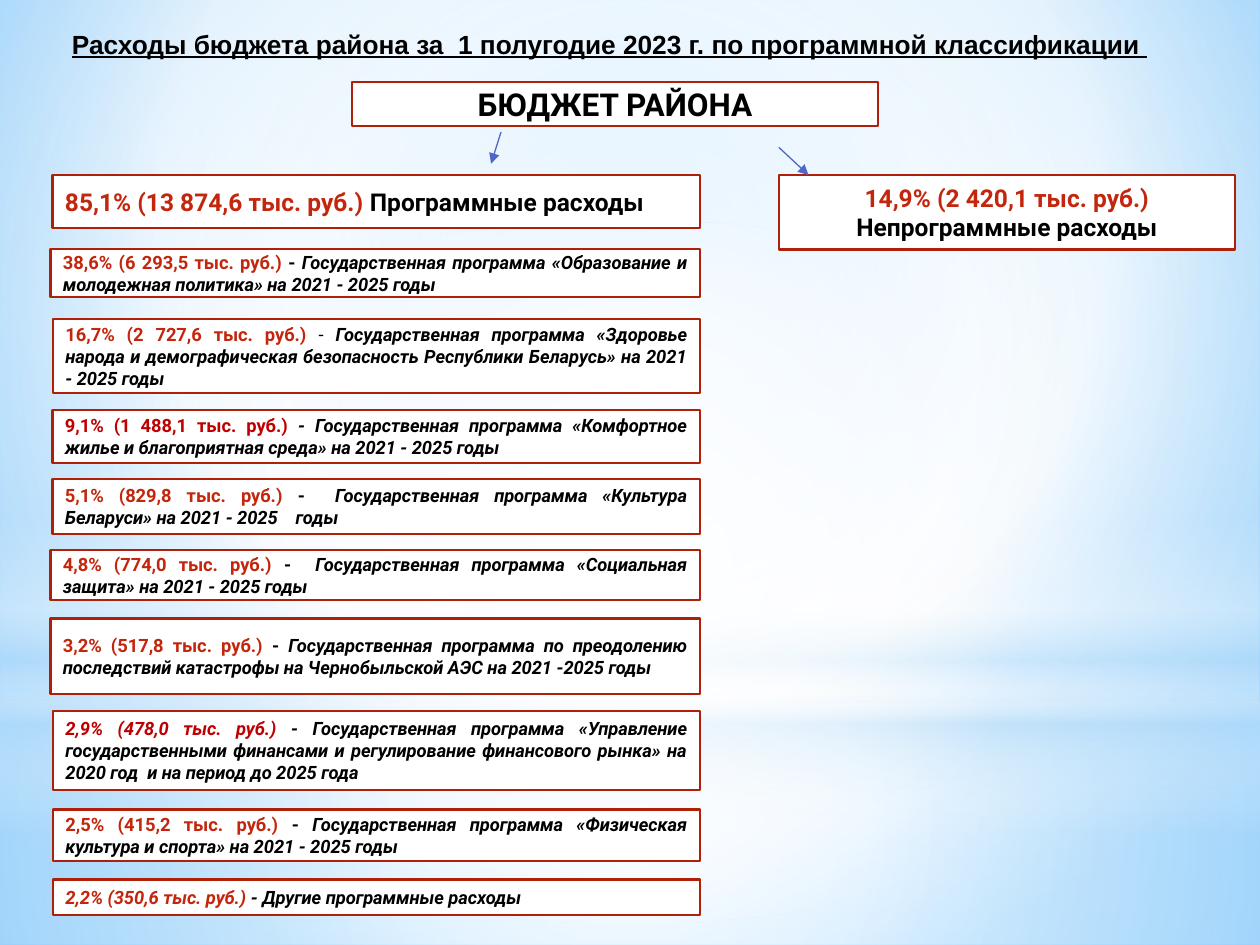
"""Slide on district budget spending by programme classification."""
from dataclasses import dataclass
from typing import Optional

from lxml import etree
from pptx import Presentation
from pptx import util as u
from pptx.dml.color import RGBColor
from pptx.enum import shapes, text
from pptx.oxml import ns, parse_xml

Cm, Pt = u.Cm, u.Pt
Box = tuple[float, float, float, float]


@dataclass(frozen=True)
class Theme:
    black: str = "000000"
    white: str = "FFFFFF"
    red: str = "C3260C"
    dark_red: str = "C00000"
    border: str = "B01F07"
    arrow: str = "4E67C8"
    mist: str = "B4DCFA"
    sky: str = "9ED5FF"
    deep_sky: str = "5BB9FF"
    title_font: str = "Arial"
    font: str = "Roboto"
    title_size: float = 15
    head_size: float = 18
    branch_size: float = 14
    body_size: float = 10.5
    border_width: float = 1.25
    arrow_width: float = 0.75


T = Theme()


@dataclass(frozen=True)
class Gradient:
    stops: tuple[tuple[int, str, int], ...]
    centre: Optional[Box] = (50, 50, 50, 50)


@dataclass(frozen=True)
class Backdrop:
    box: Box
    gradient: Gradient
    kind: shapes.MSO_SHAPE = shapes.MSO_SHAPE.RECTANGLE


@dataclass(frozen=True)
class Programme:
    left: float
    top: float
    height: float
    amount: str
    name: str
    dash: str = "- "
    color: str = T.red
    amount_italic: bool = False
    dash_bold: bool = True
    dash_italic: bool = False


SKY = Gradient(((0, T.sky, 100), (60, T.white, 100), (100, T.deep_sky, 100)), (20, 10, 20, 60))
BACKDROPS = [
    Backdrop((0, 14.17, 25.4, 4.88), Gradient(((0, T.white, 91), (37, T.white, 76), (100, T.mist, 79)))),
    Backdrop((0, 0, 25.4, 14.17), Gradient(((0, T.white, 89), (48, T.white, 62), (100, T.mist, 79)))),
    Backdrop((0, 10.46, 25.4, 6.35), Gradient(
        ((0, T.white, 0), (29, T.white, 30), (45, T.mist, 40),
         (55, T.white, 26), (65, T.mist, 60), (100, T.white, 0)), None)),
    Backdrop((0, 4.45, 25.4, 14.17), Gradient(((0, T.white, 100), (56, T.white, 0))),
             shapes.MSO_SHAPE.OVAL),
]

RIGHT_EDGE = 14.11
PROGRAMMES = [
    Programme(1.02, 5.02, 0.97, "38,6% (6 293,5 тыс. руб.) ",
              "Государственная программа «Образование и молодежная политика» на 2021 - 2025 годы "),
    Programme(1.07, 6.43, 1.5, "16,7% (2 727,6 тыс. руб.) ",
              "Государственная программа «Здоровье народа и демографическая безопасность "
              "Республики Беларусь» на 2021 - 2025 годы ", dash_bold=False),
    Programme(1.06, 8.26, 1.07, "9,1% (1 488,1 тыс. руб.) ",
              "Государственная программа «Комфортное жилье и благоприятная среда» на 2021 - 2025 годы ",
              color=T.dark_red, dash_italic=True),
    Programme(1.06, 9.65, 1.12, "5,1% (829,8 тыс. руб.)",
              "Государственная программа «Культура Беларуси» на 2021 - 2025    годы ", dash=" -  "),
    Programme(1.02, 11.09, 1, "4,8% (774,0 тыс. руб.) ",
              "Государственная программа «Социальная защита» на 2021 - 2025 годы", dash="-  "),
    Programme(1.02, 12.47, 1.52, "3,2% (517,8 тыс. руб.) ",
              "Государственная программа по преодолению последствий катастрофы "
              "на Чернобыльской АЭС на 2021 -2025 годы "),
    Programme(1.07, 14.33, 1.6, "2,9% (478,0 тыс. руб.) ",
              "Государственная программа «Управление государственными финансами и регулирование "
              "финансового рынка» на 2020 год  и на период до 2025 года ",
              color=T.dark_red, amount_italic=True, dash_italic=True),
    Programme(1.07, 16.32, 1.04, "2,5% (415,2 тыс. руб.) ",
              "Государственная программа «Физическая культура и спорта» на 2021 - 2025 годы "),
    Programme(1.07, 17.73, 0.71, "2,2% (350,6 тыс. руб.) ", "Другие программные расходы",
              amount_italic=True, dash_italic=True),
]


def gradient_xml(gradient: Gradient) -> etree._Element:
    """Return a gradient fill element with stop opacities."""
    stops = "".join(
        f'<a:gs pos="{pos * 1000}"><a:srgbClr val="{color}"><a:alpha val="{alpha * 1000}"/>'
        "</a:srgbClr></a:gs>" for pos, color, alpha in gradient.stops)
    if gradient.centre:
        sides = " ".join(f'{k}="{v * 1000}"' for k, v in zip("ltrb", gradient.centre))
        course = f'<a:path path="circle"><a:fillToRect {sides}/></a:path>'
    else:
        course = '<a:lin ang="5400000" scaled="0"/>'
    return parse_xml(f'<a:gradFill {ns.nsdecls("a")} rotWithShape="1">'
                     f"<a:gsLst>{stops}</a:gsLst>{course}</a:gradFill>")


def set_gradient(element: etree._Element, gradient: Gradient) -> None:
    """Replace the solid fill of an element by a gradient."""
    solid = element.find(ns.qn("a:solidFill"))
    element.replace(solid, gradient_xml(gradient))


def add_run(p, content: str, *, size: float = T.body_size, color: str = T.black, bold: bool = True,
            italic: bool = False, underline: bool = False, font: str = T.font) -> None:
    """Append a formatted run to a paragraph."""
    r = p.add_run()
    r.text = content
    f = r.font
    f.name, f.size, f.bold, f.italic, f.underline = font, Pt(size), bold, italic, underline
    f.color.rgb = RGBColor.from_string(color)


def add_backdrop(slide, item: Backdrop) -> None:
    """Draw one soft background area."""
    sp = slide.shapes.add_shape(item.kind, *map(Cm, item.box))
    sp.shadow.inherit = False
    sp.line.fill.background()
    sp.fill.solid()
    set_gradient(sp.element.spPr, item.gradient)


def add_box(slide, box: Box, align: text.PP_ALIGN = text.PP_ALIGN.JUSTIFY):
    """Draw a bordered white box and return its paragraph."""
    sp = slide.shapes.add_shape(shapes.MSO_SHAPE.RECTANGLE, *map(Cm, box))
    sp.shadow.inherit = False
    sp.fill.solid()
    sp.fill.fore_color.rgb = RGBColor.from_string(T.white)
    sp.line.color.rgb = RGBColor.from_string(T.border)
    sp.line.width = Pt(T.border_width)
    tf = sp.text_frame
    tf.word_wrap, tf.vertical_anchor = True, text.MSO_ANCHOR.MIDDLE
    p = tf.paragraphs[0]
    p.alignment = align
    return p


def add_programme(slide, item: Programme) -> None:
    """Draw the box of one programme."""
    p = add_box(slide, (item.left, item.top, RIGHT_EDGE - item.left, item.height))
    add_run(p, item.amount, color=item.color, italic=item.amount_italic)
    add_run(p, item.dash, bold=item.dash_bold, italic=item.dash_italic)
    add_run(p, item.name, italic=True)


def add_arrow(slide, ends: Box) -> None:
    """Draw a thin arrow."""
    c = slide.shapes.add_connector(shapes.MSO_CONNECTOR.STRAIGHT, *map(Cm, ends))
    c.line.color.rgb = RGBColor.from_string(T.arrow)
    c.line.width = Pt(T.arrow_width)
    etree.SubElement(c.line._get_or_add_ln(), ns.qn("a:tailEnd"), type="triangle")
    etree.SubElement(c.element.spPr, ns.qn("a:effectLst"))


def add_title(slide) -> None:
    """Format the title and bring it in front of the backdrop."""
    sp = slide.shapes.title
    sp.left, sp.top, sp.width, sp.height = map(Cm, (1.02, 0.33, 23.5, 1.02))
    tf = sp.text_frame
    tf.word_wrap, tf.auto_size = True, text.MSO_AUTO_SIZE.SHAPE_TO_FIT_TEXT
    tf.vertical_anchor = text.MSO_ANCHOR.TOP
    p = tf.paragraphs[0]
    p.alignment = text.PP_ALIGN.LEFT
    add_run(p, " ", size=T.head_size, font=T.title_font)
    add_run(p, "Расходы бюджета района за  1 полугодие 2023 г. по программной классификации ",
            size=T.title_size, font=T.title_font, underline=True)
    slide.shapes.element.append(sp.element)


def main() -> None:
    """Build and save the slide."""
    prs = Presentation()
    prs.slide_width, prs.slide_height = Cm(25.4), Cm(19.05)
    slide = prs.slides.add_slide(prs.slide_layouts[5])
    slide.background.fill.solid()
    set_gradient(slide.element.find(".//" + ns.qn("p:bgPr")), SKY)
    for item in BACKDROPS:
        add_backdrop(slide, item)
    add_title(slide)
    p = add_box(slide, (7.1, 1.65, 10.6, 0.89), text.PP_ALIGN.CENTER)
    add_run(p, "БЮДЖЕТ РАЙОНА", size=T.head_size)
    for box, align, amount, name in (
            ((1.06, 3.53, 13.05, 1.06), text.PP_ALIGN.JUSTIFY,
             "85,1% (13 874,6 тыс. руб.) ", "Программные расходы"),
            ((15.7, 3.53, 9.2, 1.5), text.PP_ALIGN.CENTER,
             "14,9% (2 420,1 тыс. руб.) ", "Непрограммные расходы")):
        p = add_box(slide, box, align)
        add_run(p, amount, size=T.branch_size, color=T.red)
        add_run(p, name, size=T.branch_size)
    for item in PROGRAMMES:
        add_programme(slide, item)
    for ends in ((10.1, 2.66, 9.9, 3.3), (15.7, 2.97, 16.3, 3.53)):
        add_arrow(slide, ends)
    prs.save("out.pptx")


if __name__ == "__main__":
    main()
